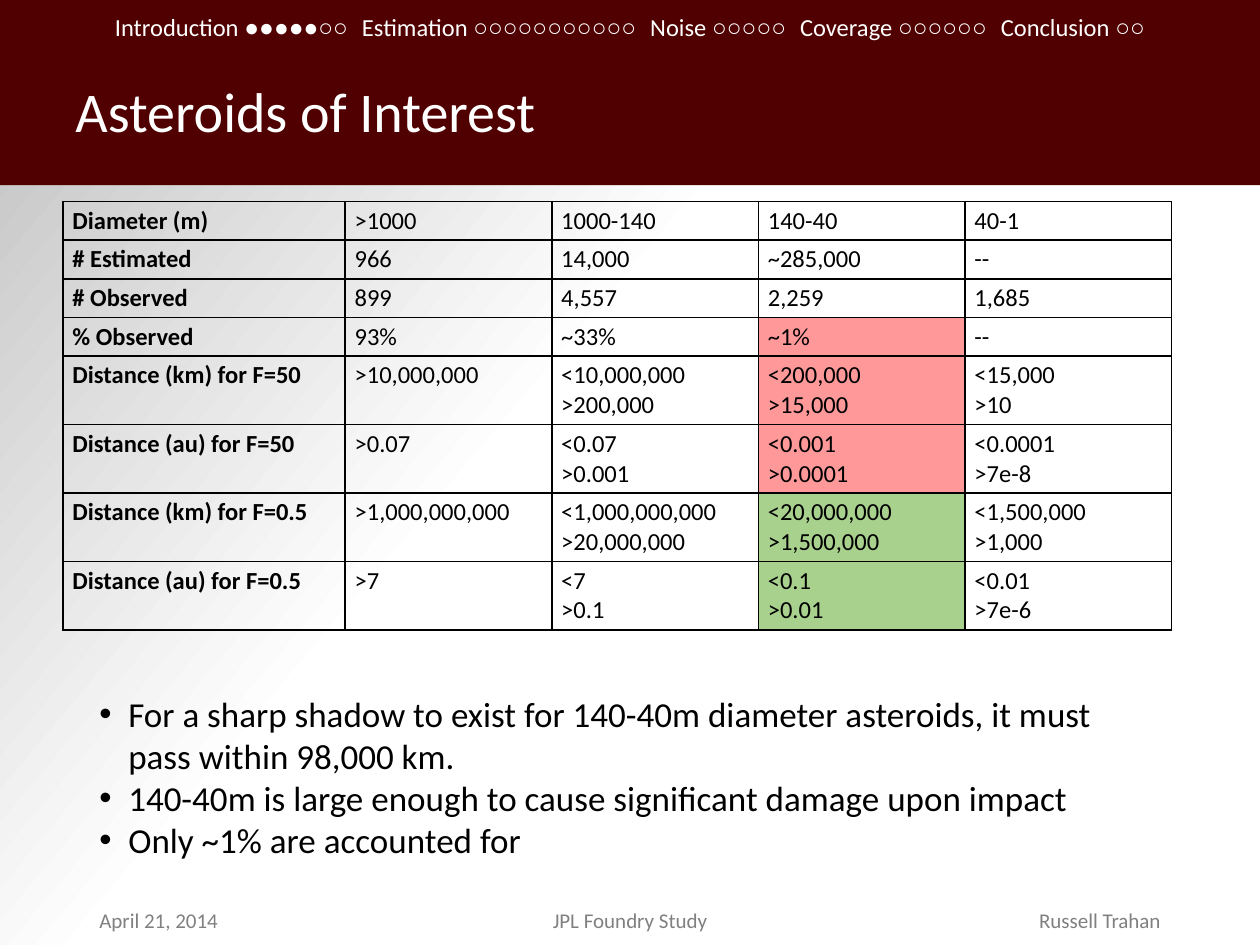
from copy import deepcopy

from lxml import etree
from pptx import Presentation
from pptx.dml.color import RGBColor
from pptx.enum.shapes import MSO_SHAPE
from pptx.enum.text import MSO_ANCHOR, PP_ALIGN
from pptx.oxml import parse_xml
from pptx.oxml.ns import qn
from pptx.util import Pt

LEFT, CENTER, RIGHT = PP_ALIGN.LEFT, PP_ALIGN.CENTER, PP_ALIGN.RIGHT
TOP, MIDDLE = MSO_ANCHOR.TOP, MSO_ANCHOR.MIDDLE
RECTANGLE = MSO_SHAPE.RECTANGLE
NAMESPACES = (
    'xmlns:a="http://schemas.openxmlformats.org/drawingml/2006/main" '
    'xmlns:p="http://schemas.openxmlformats.org/presentationml/2006/main"'
)

# Content
TITLE = "Asteroids of Interest"
SECTIONS = [
    ("Introduction", 5, 7),
    ("Estimation", 0, 11),
    ("Noise", 0, 5),
    ("Coverage", 0, 6),
    ("Conclusion", 0, 2),
]
ROWS = [
    ["Diameter (m)", ">1000", "1000-140", "140-40", "40-1"],
    ["# Estimated", "966", "14,000", "~285,000", "--"],
    ["# Observed", "899", "4,557", "2,259", "1,685"],
    ["% Observed", "93%", "~33%", "~1%", "--"],
    ["Distance (km) for F=50", ">10,000,000", "<10,000,000\n>200,000",
     "<200,000\n>15,000", "<15,000\n>10"],
    ["Distance (au) for F=50", ">0.07", "<0.07\n>0.001",
     "<0.001\n>0.0001", "<0.0001\n>7e-8"],
    ["Distance (km) for F=0.5", ">1,000,000,000", "<1,000,000,000\n>20,000,000",
     "<20,000,000\n>1,500,000", "<1,500,000\n>1,000"],
    ["Distance (au) for F=0.5", ">7", "<7\n>0.1", "<0.1\n>0.01", "<0.01\n>7e-6"],
]
HIGHLIGHT_COLUMN = 3
HIGHLIGHTS = {3: "FF9999", 4: "FF9999", 5: "FF9999", 6: "A9D18E", 7: "A9D18E"}
FINDINGS = [
    "For a sharp shadow to exist for 140-40m diameter asteroids, "
    "it must pass within 98,000 km.",
    "140-40m is large enough to cause significant damage upon impact",
    "Only ~1% are accounted for",
]
FOOTERS = [
    ("April 21, 2014", LEFT),
    ("JPL Foundry Study", CENTER),
    ("Russell Trahan", RIGHT),
]
BACKGROUND_STOPS = [(0, "FFFFFF"), (57, "FFFFFF"), (100, "BFBFBF")]
BACKGROUND_ANGLE = 220

# Layout
COLUMN_WIDTHS = [161.28] + [118.08] * 4
LINE_HEIGHT, CELL_PADDING = 17, 5.1
FOOTER_WIDTH, FOOTER_STEP = 188.64, 216


def color(value):
    return RGBColor.from_string(value)


def write(para, text, size=14, font="Calibri", ink="000000", bold=False,
          align=None, line_spacing=None, tracking=None):
    """Add text to a paragraph; each newline becomes a line break."""
    if align is not None:
        para.alignment = align
    if line_spacing is not None:
        para.line_spacing = line_spacing
    for number, line in enumerate(text.split("\n")):
        if number:
            para.add_line_break()
            para._p[-1].append(deepcopy(span._r.rPr))
        span = para.add_run()
        span.text = line
        span.font.size = Pt(size)
        span.font.name = font
        span.font.bold = bold
        span.font.color.rgb = color(ink)
        if tracking is not None:
            span._r.get_or_add_rPr().set("spc", str(round(tracking * 100)))


def add_box(page, left, top, width, height, anchor=TOP, inset=None):
    box = page.shapes.add_textbox(Pt(left), Pt(top), Pt(width), Pt(height))
    frame = box.text_frame
    frame.word_wrap = True
    frame.vertical_anchor = anchor
    if inset is not None:
        frame.margin_left = frame.margin_right = Pt(inset)
        frame.margin_top = frame.margin_bottom = Pt(inset)
    return frame


def add_bullet(para, indent):
    properties = para._p.get_or_add_pPr()
    properties.set("marL", str(Pt(indent)))
    properties.set("indent", str(-Pt(indent)))
    etree.SubElement(properties, qn("a:buFont"), typeface="Arial")
    etree.SubElement(properties, qn("a:buChar"), char="•")


def add_borders(cell):
    properties = cell._tc.get_or_add_tcPr()
    for side in "LRTB":
        properties.append(parse_xml(
            f'<a:ln{side} {NAMESPACES} w="{Pt(1)}"><a:solidFill>'
            f'<a:srgbClr val="000000"/></a:solidFill></a:ln{side}>'))


def set_background(page):
    stops = "".join(
        f'<a:gs pos="{position * 1000}"><a:srgbClr val="{value}"/></a:gs>'
        for position, value in BACKGROUND_STOPS)
    page._element.cSld.insert(0, parse_xml(
        f'<p:bg {NAMESPACES}><p:bgPr><a:gradFill><a:gsLst>{stops}</a:gsLst>'
        f'<a:lin ang="{BACKGROUND_ANGLE * 60000}" scaled="0"/></a:gradFill>'
        '<a:effectLst/></p:bgPr></p:bg>'))


def add_header(page):
    band = page.shapes.add_shape(RECTANGLE, 0, 0, Pt(720), Pt(105.84))
    band.shadow.inherit = False
    band.fill.solid()
    band.fill.fore_color.rgb = color("500000")
    band.line.fill.background()

    title = add_box(page, 36, 23.76, 445.68, 82.8, anchor=MIDDLE)
    write(title.paragraphs[0], TITLE, size=32, ink="FFFFFF", line_spacing=0.9)

    # Section names with one dot per slide, filled when shown
    progress = add_box(page, 36, 8.64, 648, 14.4, inset=0).paragraphs[0]
    for number, (name, done, total) in enumerate(SECTIONS):
        if number:
            write(progress, " ", font="Arial", ink="FFFFFF", tracking=3.9)
        write(progress, name + " ", ink="FFFFFF", align=CENTER, line_spacing=0.9)
        write(progress, "●" * done + "○" * (total - done), font="Arial", ink="FFFFFF")


def add_asteroid_table(page):
    heights = [CELL_PADDING + LINE_HEIGHT * max(text.count("\n") + 1 for text in row)
               for row in ROWS]
    table = page.shapes.add_table(
        len(ROWS), len(COLUMN_WIDTHS), Pt(36), Pt(115.2),
        Pt(sum(COLUMN_WIDTHS)), Pt(sum(heights))).table
    table.first_row = table.horz_banding = False
    for column, width in zip(table.columns, COLUMN_WIDTHS):
        column.width = Pt(width)
    for r, row in enumerate(ROWS):
        table.rows[r].height = Pt(heights[r])
        for c, text in enumerate(row):
            cell = table.cell(r, c)
            cell.margin_left = cell.margin_right = Pt(5.4)
            cell.margin_top = cell.margin_bottom = Pt(2.5)
            write(cell.text_frame.paragraphs[0], text, bold=c == 0)
            add_borders(cell)
            if c == HIGHLIGHT_COLUMN and r in HIGHLIGHTS:
                cell.fill.solid()
                cell.fill.fore_color.rgb = color(HIGHLIGHTS[r])
            else:
                cell.fill.background()


def add_findings(page):
    frame = add_box(page, 49.68, 392.4, 620.64, 104.4)
    for number, text in enumerate(FINDINGS):
        para = frame.add_paragraph() if number else frame.paragraphs[0]
        add_bullet(para, 16.56)
        write(para, text, size=20)


def add_footers(page):
    for number, (text, align) in enumerate(FOOTERS):
        frame = add_box(page, 49.68 + number * FOOTER_STEP, 514.8, FOOTER_WIDTH, 21.6)
        write(frame.paragraphs[0], text, size=12, ink="808080", align=align)


def main():
    deck = Presentation()
    deck.slide_width, deck.slide_height = Pt(720), Pt(540)
    page = deck.slides.add_slide(deck.slide_layouts[6])
    set_background(page)
    add_header(page)
    add_asteroid_table(page)
    add_findings(page)
    add_footers(page)
    deck.save("out.pptx")


if __name__ == "__main__":
    main()
